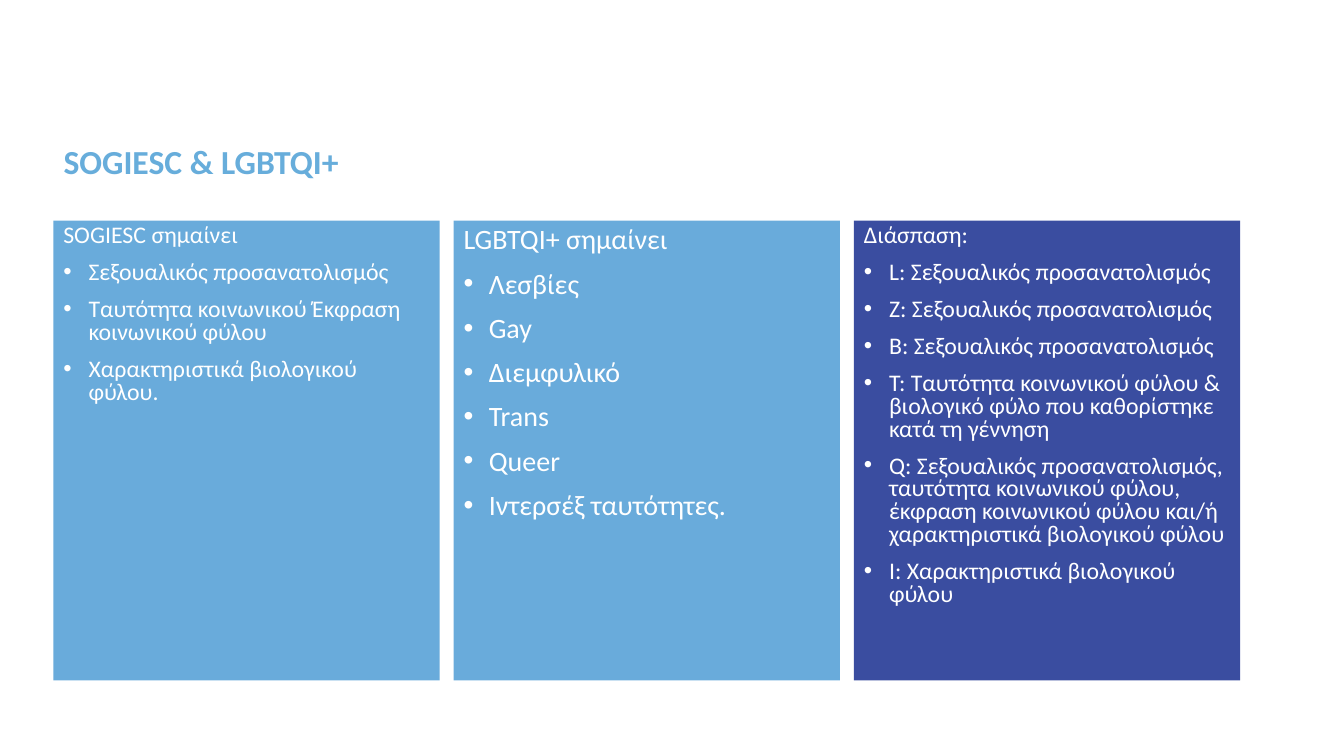
from pptx import Presentation
from pptx.dml.color import RGBColor
from pptx.enum.shapes import MSO_SHAPE
from pptx.enum.text import MSO_ANCHOR, MSO_AUTO_SIZE, PP_ALIGN
from pptx.oxml.ns import qn
from pptx.util import Inches, Pt
from lxml import etree

FONT = "Calibri"
WHITE = RGBColor(0xFF, 0xFF, 0xFF)
TITLE_BLUE = RGBColor(0x67, 0xAD, 0xDB)
SKY = RGBColor(0x69, 0xAB, 0xDB)
INDIGO = RGBColor(0x3A, 0x4D, 0xA0)

LEFT, TOP = 0.53, 2.19
PANEL_W, PANEL_H = 3.83, 4.56
PANEL_STEP = 3.97

# Fill, text size, line spacing, heading, bullets
PANELS = [
    (SKY, 17, 0.8, "SOGIESC σημαίνει", [
        "Σεξουαλικός προσανατολισμός",
        "Ταυτότητα κοινωνικού Έκφραση κοινωνικού φύλου",
        "Χαρακτηριστικά βιολογικού φύλου.",
    ]),
    (SKY, 20, 0.9, "LGBTQI+ σημαίνει", [
        "Λεσβίες",
        "Gay",
        "Διεμφυλικό",
        "Trans",
        "Queer",
        "Ιντερσέξ ταυτότητες.",
    ]),
    (INDIGO, 17, 0.8, "Διάσπαση:", [
        "L: Σεξουαλικός προσανατολισμός",
        "Ζ: Σεξουαλικός προσανατολισμός",
        "Β: Σεξουαλικός προσανατολισμός",
        "Τ: Ταυτότητα κοινωνικού φύλου & βιολογικό φύλο που καθορίστηκε "
        "κατά τη γέννηση",
        "Q: Σεξουαλικός προσανατολισμός, ταυτότητα κοινωνικού φύλου, "
        "έκφραση κοινωνικού φύλου και/ή χαρακτηριστικά βιολογικού φύλου",
        "I: Χαρακτηριστικά βιολογικού φύλου",
    ]),
]


def add_run(p, text, size, color, bold=False):
    r = p.add_run()
    r.text = text
    r.font.name = FONT
    r.font.size = Pt(size)
    r.font.color.rgb = color
    r.font.bold = bold


def add_bullet(p):
    pPr = p._p.get_or_add_pPr()
    pPr.set("marL", str(Inches(0.25)))
    pPr.set("indent", str(Inches(-0.25)))
    font = etree.SubElement(pPr, qn("a:buFont"))
    font.set("typeface", "Arial")
    etree.SubElement(pPr, qn("a:buChar")).set("char", "•")


def set_title(s, text):
    sp = s.shapes.title
    sp.left, sp.top = Inches(LEFT), Inches(1.25)
    sp.width, sp.height = Inches(11.89), Inches(0.74)
    tf = sp.text_frame
    tf.auto_size = MSO_AUTO_SIZE.NONE
    tf.vertical_anchor = MSO_ANCHOR.MIDDLE
    p = tf.paragraphs[0]
    p.alignment = PP_ALIGN.LEFT
    p.line_spacing = 0.9
    add_run(p, text, 24, TITLE_BLUE, bold=True)


def add_panel(s, left, fill, size, spacing, heading, bullets):
    sp = s.shapes.add_shape(MSO_SHAPE.RECTANGLE, Inches(left), Inches(TOP),
                            Inches(PANEL_W), Inches(PANEL_H))
    sp.shadow.inherit = False
    sp.fill.solid()
    sp.fill.fore_color.rgb = fill
    sp.line.fill.background()
    tf = sp.text_frame
    tf.word_wrap = True
    tf.vertical_anchor = MSO_ANCHOR.TOP
    for i, text in enumerate([heading] + bullets):
        p = tf.add_paragraph() if i else tf.paragraphs[0]
        p.alignment = PP_ALIGN.LEFT
        p.line_spacing = spacing
        if i:
            p.space_before = Pt(10)
            add_bullet(p)
        add_run(p, text, size, WHITE)


def main():
    prs = Presentation()
    prs.slide_width, prs.slide_height = Inches(13.33), Inches(7.5)
    s = prs.slides.add_slide(prs.slide_layouts[5])
    set_title(s, "SOGIESC & LGBTQI+")
    for i, panel in enumerate(PANELS):
        add_panel(s, LEFT + i * PANEL_STEP, *panel)
    prs.save("out.pptx")


if __name__ == "__main__":
    main()
